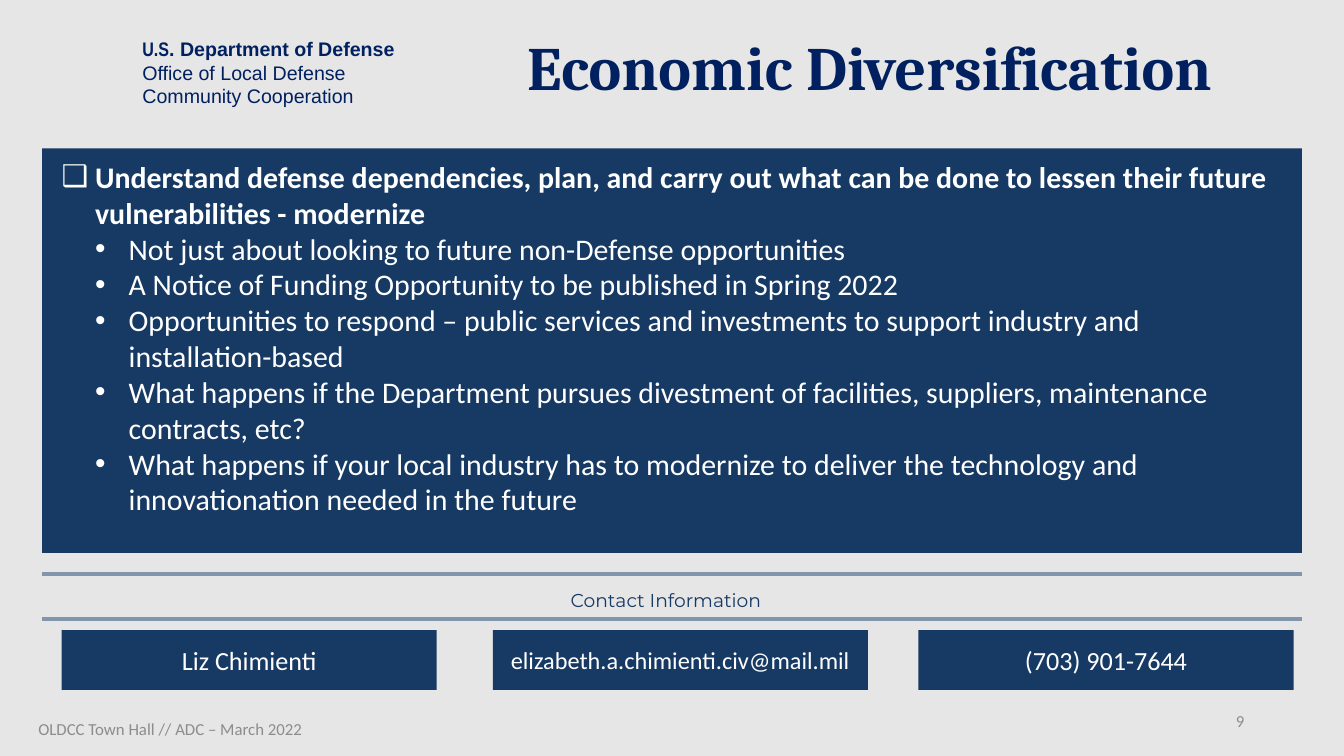
"""Build the Economic Diversification slide."""
from lxml import etree
from pptx import Presentation
from pptx.dml.color import RGBColor
from pptx.enum import shapes, text
from pptx.oxml.ns import qn
from pptx.util import Inches, Pt

COLOURS = {"background": "E7E6E6", "title": "002060", "panel": "173A64",
           "rule": "8395AA", "white": "FFFFFF", "footer": "8C8C8C"}
WIDTH, HEIGHT = Inches(20), Inches(11.25)
COLUMNS, ROWS = 240, 135
CENTER = text.PP_ALIGN.CENTER
MIDDLE = text.MSO_ANCHOR.MIDDLE

BULLETS = [
    "Not just about looking to future non-Defense opportunities",
    "A Notice of Funding Opportunity to be published in Spring 2022",
    "Opportunities to respond – public services and investments to support "
    "industry and installation-based",
    "What happens if the Department pursues divestment of facilities, "
    "suppliers, maintenance contracts, etc?",
    "What happens if your local industry has to modernize to deliver the "
    "technology and innovationation needed in the future",
]


def colour(name):
    """Return a named colour."""
    return RGBColor.from_string(COLOURS[name])


def place(box):
    """Turn a box of grid columns and rows into lengths."""
    left, top, width, height = box
    return (int(WIDTH * left / COLUMNS), int(HEIGHT * top / ROWS),
            int(WIDTH * width / COLUMNS), int(HEIGHT * height / ROWS))


def set_frame(frame, anchor=text.MSO_ANCHOR.TOP, wrap=True, insets=None):
    """Set how a text frame holds its text."""
    frame.auto_size = text.MSO_AUTO_SIZE.NONE
    frame.word_wrap = wrap
    frame.vertical_anchor = anchor
    if insets is not None:
        (frame.margin_left, frame.margin_top,
         frame.margin_right, frame.margin_bottom) = map(Inches, insets)


def set_bullet(paragraph, bullet, indent):
    """Give a paragraph a hanging bullet."""
    properties = paragraph._p.get_or_add_pPr()
    properties.set("marL", str(Inches(indent)))
    properties.set("indent", str(Inches(-0.5)))
    etree.SubElement(properties, qn("a:buFont")).set("typeface", "Arial")
    etree.SubElement(properties, qn("a:buChar")).set("char", bullet)


def write(frame, words, size, color, font="Calibri", bold=False, align=None,
          spacing=None, bullet=None, indent=0.5, level=0):
    """Write one paragraph into a frame and return it."""
    paragraph = frame.paragraphs[0]
    if paragraph.runs:
        paragraph = frame.add_paragraph()
    paragraph.level = level
    paragraph.alignment = align or text.PP_ALIGN.LEFT
    if spacing:
        paragraph.line_spacing = spacing
    if bullet:
        set_bullet(paragraph, bullet, indent)
    run = paragraph.add_run()
    run.text = words
    run.font.size, run.font.name, run.font.bold = Pt(size), font, bold
    run.font.color.rgb = colour(color)
    return paragraph


def add_label(slide, box, words, size, color, anchor=MIDDLE, insets=None, **style):
    """Add a one-paragraph text box."""
    frame = slide.shapes.add_textbox(*place(box)).text_frame
    set_frame(frame, anchor, insets=insets)
    write(frame, words, size, color, **style)


def add_panel(slide, box):
    """Add a plain filled rectangle."""
    shape = slide.shapes.add_shape(shapes.MSO_SHAPE.RECTANGLE, *place(box))
    shape.shadow.inherit = False
    shape.fill.solid()
    shape.fill.fore_color.rgb = colour("panel")
    shape.line.fill.background()
    return shape


def add_rule(slide, left, top, width):
    """Add a horizontal line."""
    x, y, length, _ = place((left, top, width, 0))
    line = slide.shapes.add_connector(shapes.MSO_CONNECTOR.STRAIGHT, x, y, x + length, y)
    line.line.color.rgb = colour("rule")
    line.line.width = Pt(3.75)
    etree.SubElement(line._element.spPr, qn("a:effectLst"))


def add_header(slide, box):
    """Add the office name and the slide title."""
    left, top, width, height = box
    frame = slide.shapes.add_textbox(*place((left, top, 48, height))).text_frame
    set_frame(frame, wrap=False)
    office = write(frame, "U.S", 21, "title", font="Arial Narrow", bold=True)
    rest = office.add_run()
    rest.text = ". Department of Defense"
    rest.font.size, rest.font.name, rest.font.bold = Pt(21), "Arial", True
    rest.font.color.rgb = colour("title")
    for line in ("Office of Local Defense", "Community Cooperation"):
        write(frame, line, 21, "title", font="Arial")

    title = slide.shapes.title
    title.left, title.top, title.width, title.height = place(
        (left + 47.6, top, width - 47.6, 17.5))
    set_frame(title.text_frame)
    write(title.text_frame, "Economic Diversification", 66, "title",
          font="Cambria", bold=True, align=CENTER, spacing=0.9)


def add_body(slide, box):
    """Add the main panel with its bullets."""
    frame = add_panel(slide, box).text_frame
    set_frame(frame, insets=(0.29, 0.15, 0.45, 0))
    write(frame, "Understand defense dependencies, plan, and carry out what can be "
          "done to lessen their future vulnerabilities - modernize",
          32, "white", bold=True, bullet="❑")
    for words in BULLETS:
        write(frame, words, 32, "white", bullet="•", indent=1, level=1)


def add_contacts(slide, box):
    """Add the contact heading between rules and the three contact cards."""
    left, top, width, height = box
    for offset in (0, 8):
        add_rule(slide, left, top + offset, width)
    add_label(slide, (left + 75.2, top + 2, 72.4, 4.5), "Contact Information", 20,
              "panel", anchor=text.MSO_ANCHOR.TOP, insets=(0, 0, 0, 0),
              font="Montserrat", align=CENTER, spacing=Pt(28))
    cards = ((3.5, "Liz Chimienti", 28),
             (80.5, "elizabeth.a.chimienti.civ@mail.mil", 26),
             (156.5, "(703) 901-7644", 28))
    for offset, words, size in cards:
        card = add_panel(slide, (left + offset, top + 10, 67, height - 10))
        set_frame(card.text_frame, MIDDLE)
        write(card.text_frame, words, size, "white", align=CENTER)


def add_footer(slide, box):
    """Add the event name and the slide number."""
    left, top, width, height = box
    add_label(slide, (left, top + 1.3, 54.8, height), "OLDCC Town Hall // ADC – March 2022",
              18, "footer", align=CENTER)
    add_label(slide, (left + width - 54, top, 54, height), "9", 18, "footer",
              align=text.PP_ALIGN.RIGHT)


def main():
    """Build and save the presentation."""
    presentation = Presentation()
    presentation.slide_width, presentation.slide_height = WIDTH, HEIGHT
    slide = presentation.slides.add_slide(presentation.slide_layouts[5])
    slide.background.fill.solid()
    slide.background.fill.fore_color.rgb = colour("background")
    add_header(slide, (24.25, 6, 214.4, 14))
    add_body(slide, (7.5, 26.5, 225, 72.25))
    add_contacts(slide, (7.5, 102.5, 225, 20.7))
    add_footer(slide, (3, 125.2, 220.4, 7.2))
    presentation.save("out.pptx")


if __name__ == "__main__":
    main()
